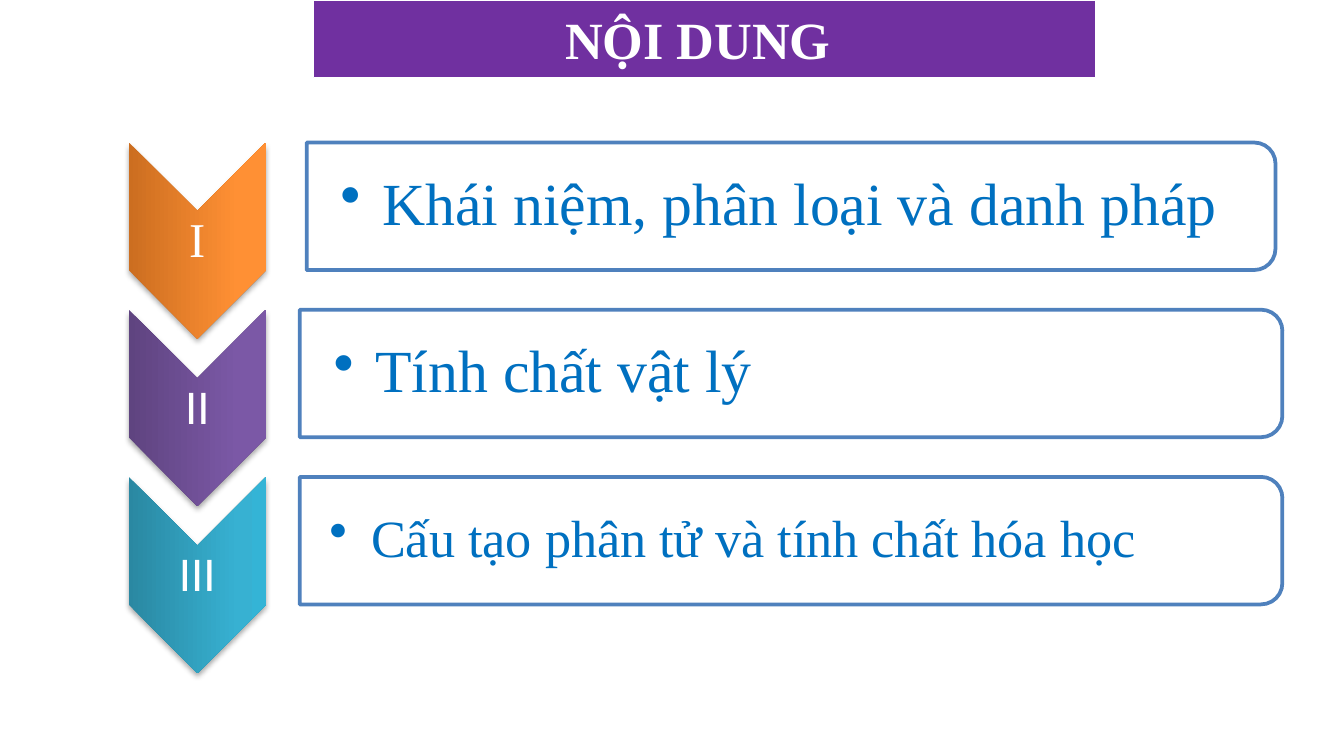
from copy import deepcopy

from pptx import Presentation
from pptx.dml.color import RGBColor
from pptx.enum.shapes import MSO_SHAPE
from pptx.enum.text import MSO_ANCHOR, PP_ALIGN
from pptx.oxml.ns import qn
from pptx.oxml.xmlchemy import OxmlElement
from pptx.util import Cm, Pt

RECTANGLE = MSO_SHAPE.RECTANGLE
CHEVRON = MSO_SHAPE.CHEVRON
ROUND_TOP = MSO_SHAPE.ROUND_2_SAME_RECTANGLE
MIDDLE = MSO_ANCHOR.MIDDLE
CENTER = PP_ALIGN.CENTER

# Content
TITLE = "NỘI DUNG "
SECTIONS = [
    dict(numeral="I", numeral_font="Times New Roman", topic="Khái niệm, phân loại và danh pháp",
         size=32, length=18.31, inset=0.64, stops=("CC6E20", "FF9034", "FF9136")),
    dict(numeral="II", numeral_font="Calibri", topic="Tính chất vật lý",
         size=32, length=18.57, inset=0.64, stops=("5F4480", "7B58A6", "7C57A8")),
    dict(numeral="III", numeral_font="Calibri", topic="Cấu tạo phân tử và tính chất hóa học",
         size=28, length=18.57, inset=0.56, stops=("2A88A2", "37B1D2", "34B4D6")),
]

THEME = dict(font="Times New Roman", white="FFFFFF", banner="7030A0", topic="0070C0",
             outline="4F81BD", shadow="000000", title_size=28, numeral_size=26)

# Layout in centimetres
ROW_PITCH = 3.16
CHEVRON_X, CHEVRON_Y = 3.73, 4.55
CHEVRON_LENGTH, CHEVRON_WIDTH = 3.71, 2.59
PANEL_X, PANEL_Y, PANEL_HEIGHT = 14.95, 3.9, 2.41
TOPIC_HEIGHT, TOPIC_TRIM = 2.18, 0.11
NUMERAL_HEIGHT = 1.12
MARGIN, BULLET_INDENT = 0.05, 0.79
STOP_POSITIONS = (0, 0.8, 1)


def color(name):
    return RGBColor.from_string(THEME.get(name, name))


def add_child(parent, tag, **attributes):
    child = OxmlElement(tag)
    for key, value in attributes.items():
        child.set(key, str(value))
    parent.append(child)
    return child


def centered(x, y, width, height):
    return Cm(x - width / 2), Cm(y - height / 2), Cm(width), Cm(height)


def add_rotated(page, kind, x, y, length, width):
    shape = page.shapes.add_shape(kind, *centered(x, y, length, width))
    shape.rotation = 90
    shape.shadow.inherit = False
    return shape


def write(frame, text, font, size, ink, bold=False):
    frame.text = text
    frame.word_wrap = True
    frame.vertical_anchor = MIDDLE
    para = frame.paragraphs[0]
    span = para.runs[0]
    span.font.name, span.font.size, span.font.bold = font, Pt(size), bold
    span.font.color.rgb = color(ink)
    return para


def add_label(page, place, text, font, size, ink, inset, after):
    frame = page.shapes.add_textbox(*place).text_frame
    frame.margin_left = Cm(inset)
    frame.margin_right = frame.margin_top = frame.margin_bottom = Cm(MARGIN)
    para = write(frame, text, font, size, ink)
    para.line_spacing = 0.9
    para.space_after = Pt(size * after)
    return para


def add_chevron(page, y, stops):
    shape = add_rotated(page, CHEVRON, CHEVRON_X, y, CHEVRON_LENGTH, CHEVRON_WIDTH)
    shape.line.fill.background()
    # Three-stop gradient running along the rotated shape
    shape.fill.gradient()
    shape.fill.gradient_angle = 90
    properties = shape.element.spPr
    stop_list = properties.find(".//" + qn("a:gsLst"))
    stop_list.append(deepcopy(stop_list[-1]))
    for stop, position, shade in zip(shape.fill.gradient_stops, STOP_POSITIONS, stops):
        stop.position = position
        stop.color.rgb = color(shade)
    # Soft shadow below
    shadow = add_child(properties.find(qn("a:effectLst")), "a:outerShdw", blurRad=Pt(3.1),
                       dist=Pt(1.8), dir=90 * 60000, rotWithShape=0)
    shade = add_child(shadow, "a:srgbClr", val=THEME["shadow"])
    add_child(shade, "a:alpha", val=35000)


def add_panel(page, y, length):
    # Upright before rotation, so its rounded top ends up on the right
    shape = add_rotated(page, ROUND_TOP, PANEL_X, y, PANEL_HEIGHT, length)
    shape.fill.solid()
    shape.fill.fore_color.rgb = color("white")
    add_child(shape.element.spPr.find(qn("a:solidFill"))[0], "a:alpha", val=90000)
    shape.line.color.rgb = color("outline")
    shape.line.width = Pt(2)


def add_section(page, row, section):
    offset = row * ROW_PITCH
    chevron_y, panel_y = CHEVRON_Y + offset, PANEL_Y + offset
    length = section["length"]

    # Numbered chevron
    add_chevron(page, chevron_y, section["stops"])
    para = add_label(page, centered(CHEVRON_X, chevron_y + 0.02, CHEVRON_WIDTH, NUMERAL_HEIGHT),
                     section["numeral"], section["numeral_font"], THEME["numeral_size"],
                     "white", MARGIN, 0.35)
    para.alignment = CENTER

    # Topic panel
    add_panel(page, panel_y, length)
    place = centered(PANEL_X - TOPIC_TRIM / 2, panel_y, length - TOPIC_TRIM, TOPIC_HEIGHT)
    para = add_label(page, place, section["topic"], THEME["font"], section["size"],
                     "topic", section["inset"], 0.15)
    para.level = 1
    properties = para._p.get_or_add_pPr()
    properties.set("marL", str(Cm(BULLET_INDENT)))
    properties.set("indent", str(-Cm(BULLET_INDENT)))
    add_child(properties, "a:buChar", char="•")


def add_banner(page):
    banner = page.shapes.add_shape(RECTANGLE, Cm(5.92), Cm(0), Cm(14.78), Cm(1.47))
    banner.shadow.inherit = False
    banner.fill.solid()
    banner.fill.fore_color.rgb = color("banner")
    banner.line.color.rgb = color("white")
    banner.line.width = Pt(0.75)
    para = write(banner.text_frame, TITLE, THEME["font"], THEME["title_size"], "white", True)
    para.alignment = CENTER


def main():
    deck = Presentation()
    deck.slide_width, deck.slide_height = Cm(25.4), Cm(14.29)
    page = deck.slides.add_slide(deck.slide_layouts[6])
    add_banner(page)
    for row, section in enumerate(SECTIONS):
        add_section(page, row, section)
    deck.save("out.pptx")


if __name__ == "__main__":
    main()
